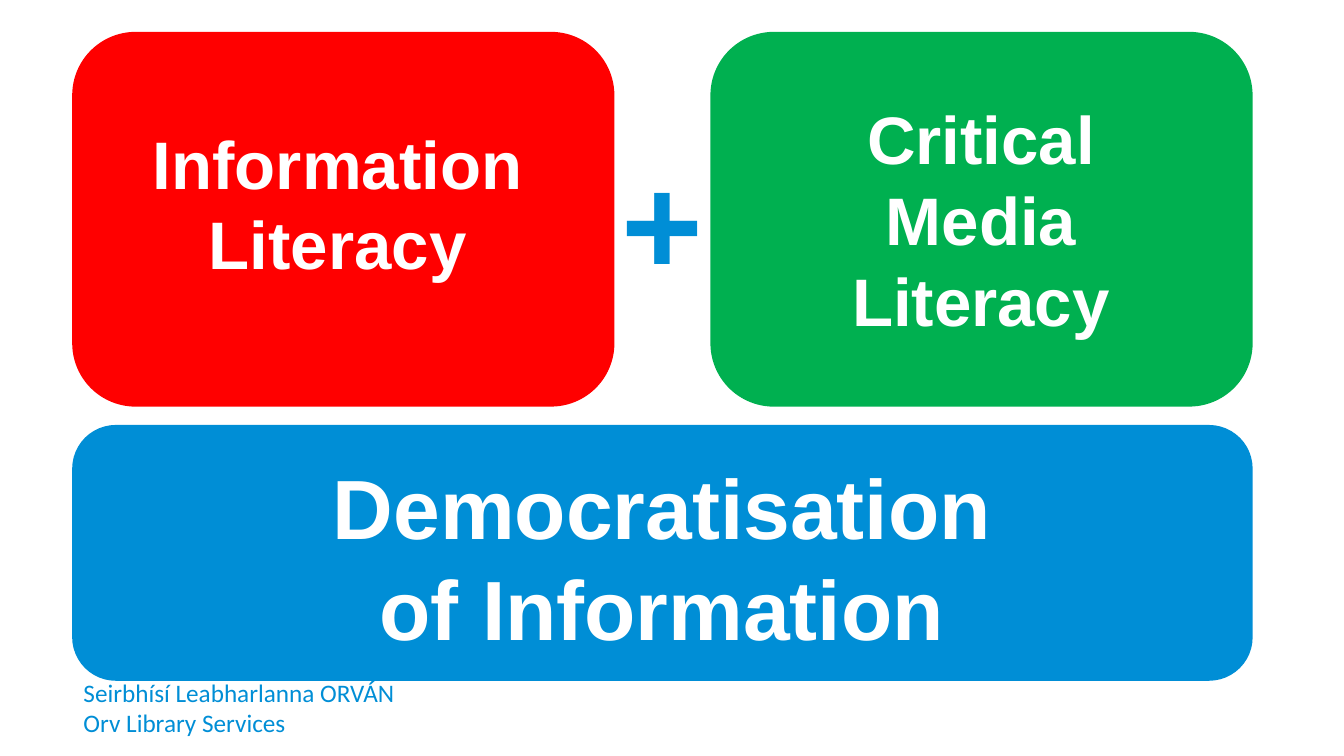
from pptx import Presentation
from pptx.dml.color import RGBColor
from pptx.enum.shapes import MSO_SHAPE
from pptx.enum.text import PP_ALIGN
from pptx.util import Inches, Pt

ROUNDED = MSO_SHAPE.ROUNDED_RECTANGLE
CENTER = PP_ALIGN.CENTER
LEFT = PP_ALIGN.LEFT

RED, GREEN, BLUE, WHITE = "FF0000", "00B050", "008ED6", "FFFFFF"

SLIDE_WIDTH, SLIDE_HEIGHT = 13.33, 7.5
MARGIN = 0.73
PILLAR_TOP, PILLAR_WIDTH, PILLAR_HEIGHT = 0.33, 5.35, 3.69
PILLAR_STEP = 6.33
BASE_TOP, BASE_HEIGHT = 4.23, 2.51
BASE_WIDTH = PILLAR_STEP + PILLAR_WIDTH
LABEL_WIDTH = 4.24


def colour(hex_string):
    return RGBColor.from_string(hex_string)


def add_panel(slide, box, fill):
    panel = slide.shapes.add_shape(ROUNDED, *map(Inches, box))
    panel.shadow.inherit = False
    panel.fill.solid()
    panel.fill.fore_color.rgb = colour(fill)
    panel.line.color.rgb = colour(fill)
    panel.line.width = Pt(2)


def add_label(slide, box, text, size, ink, font="Arial", bold=True,
              align=CENTER):
    frame = slide.shapes.add_textbox(*map(Inches, box)).text_frame
    frame.word_wrap = True
    frame.text = text
    for paragraph in frame.paragraphs:
        paragraph.alignment = align
        for run in paragraph.runs:
            run.font.name = font
            run.font.size = Pt(size)
            run.font.bold = bold
            run.font.color.rgb = colour(ink)


def main():
    deck = Presentation()
    deck.slide_width = Inches(SLIDE_WIDTH)
    deck.slide_height = Inches(SLIDE_HEIGHT)
    slide = deck.slides.add_slide(deck.slide_layouts[6])

    for column, fill in enumerate((RED, GREEN)):
        left = MARGIN + column * PILLAR_STEP
        add_panel(slide, (left, PILLAR_TOP, PILLAR_WIDTH, PILLAR_HEIGHT), fill)
    add_panel(slide, (MARGIN, BASE_TOP, BASE_WIDTH, BASE_HEIGHT), BLUE)

    add_label(slide, (1.23, 1.16, LABEL_WIDTH, 1.72),
              "Information Literacy", 48, WHITE)
    add_label(slide, (7.61, 0.92, LABEL_WIDTH, 2.52),
              "Critical Media Literacy", 48, WHITE)
    add_label(slide, (4.45, 1.29, LABEL_WIDTH, 1.78), "+", 100, BLUE)
    add_label(slide, (2.78, 4.47, 7.57, 2.12),
              "Democratisation of Information", 60, WHITE)
    add_label(slide, (MARGIN, 6.67, 4.57, 0.71),
              "Seirbhísí Leabharlanna ORVÁN\vOrv Library Services", 18, BLUE,
              font="Calibri", bold=False, align=LEFT)

    deck.save("out.pptx")


if __name__ == "__main__":
    main()
